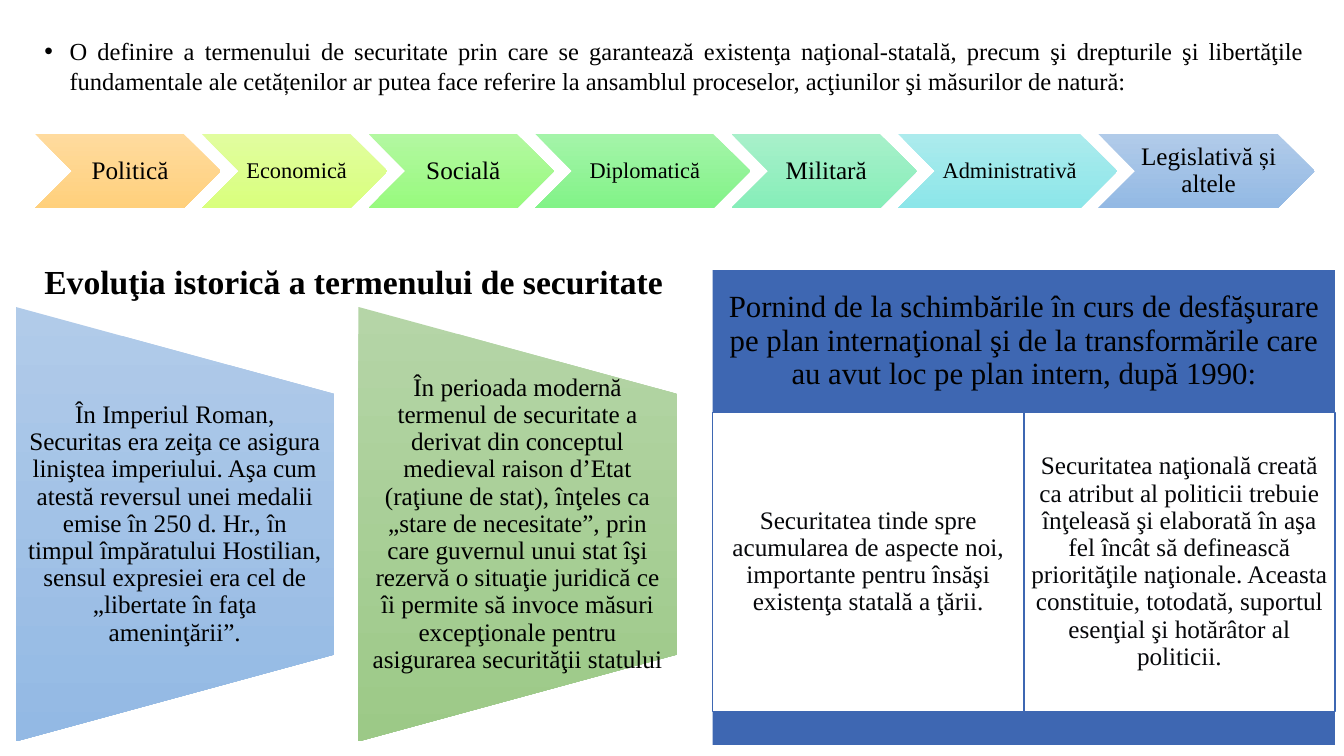
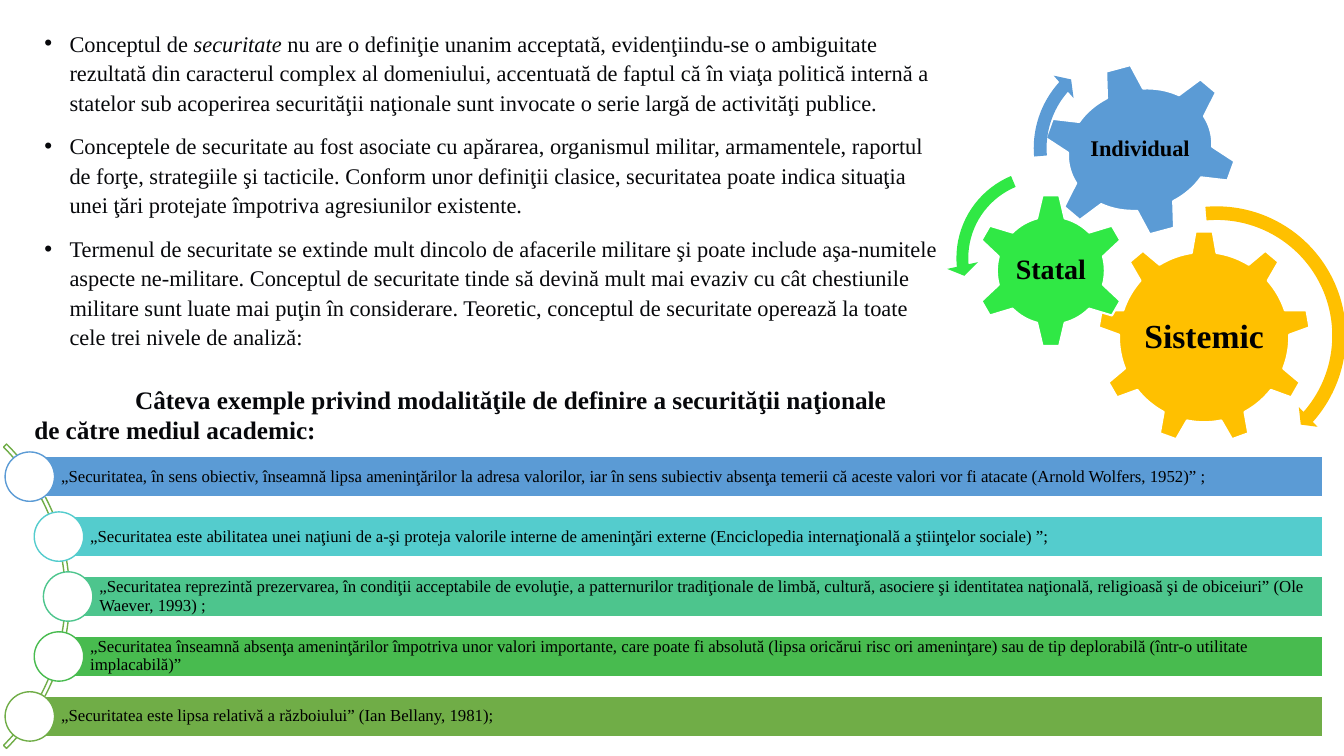
from dataclasses import dataclass

from pptx import Presentation
from pptx.dml.color import RGBColor
from pptx.enum.shapes import MSO_SHAPE
from pptx.enum.text import MSO_ANCHOR, MSO_AUTO_SIZE, PP_ALIGN
from pptx.oxml.ns import qn
from pptx.util import Inches, Pt

SLIDE_WIDTH, SLIDE_HEIGHT = Inches(13.33), Inches(7.5)


@dataclass(frozen=True)
class Theme:
    font: str = "Times New Roman"
    black: str = "000000"
    ink: str = "07080B"
    white: str = "FFFFFF"
    panel: str = "3E67B2"
    blue: str = "5B9BD5"
    gold: str = "FFC000"
    lime: str = "30E845"
    green: str = "70AD47"
    blue_fade: tuple = ("B1CBE9", "93B9E4")
    green_fade: tuple = ("B5D5A7", "9CC987")
    heading: float = 24
    panel_heading: float = 22
    subheading: float = 20
    text: float = 18
    lead: float = 17.5
    small: float = 16
    note: float = 12


THEME = Theme()

# Chevron: label, width in percent of the slide, size, gradient
CHEVRONS = [
    ("Politică", 13.8, THEME.text, ("FFDB9E", "FFD07C")),
    ("Economică", 13.8, THEME.small, ("E1FD9F", "D9FF7D")),
    ("Socială", 13.8, THEME.text, ("B3F8A1", "98FA7E")),
    ("Diplomatică", 16, THEME.small, ("A4F4A9", "82F388")),
    ("Militară", 13.8, THEME.text, ("A8F0CA", "86EEB9")),
    ("Administrativă", 16.3, THEME.small, ("ACEBED", "8CE6E9")),
    ("Legislativă și altele", 16.1, THEME.text, THEME.blue_fade),
]
HISTORY = [
    ("În Imperiul Roman, Securitas era zeiţa ce asigura liniştea imperiului. Aşa cum atestă "
     "reversul unei medalii emise în 250 d. Hr., în timpul împăratului Hostilian, sensul "
     "expresiei era cel de „libertate în faţa ameninţării”.", THEME.blue_fade),
    ("În perioada modernă termenul de securitate a derivat din conceptul medieval raison d’Etat "
     "(raţiune de stat), înţeles ca „stare de necesitate”, prin care guvernul unui stat îşi "
     "rezervă o situaţie juridică ce îi permite să invoce măsuri excepţionale pentru "
     "asigurarea securităţii statului", THEME.green_fade),
]
PANEL_TEXTS = [
    "Securitatea tinde spre acumularea de aspecte noi, importante pentru însăşi existenţa "
    "statală a ţării.",
    "Securitatea naţională creată ca atribut al politicii trebuie înţeleasă şi elaborată în aşa "
    "fel încât să definească priorităţile naţionale. Aceasta constituie, totodată, suportul "
    "esenţial şi hotărâtor al politicii.",
]
# Each paragraph is a list of runs; odd runs are italic
CONCEPTS = [
    ["Conceptul de ", "securitate",
     " nu are o definiţie unanim acceptată, evidenţiindu-se o ambiguitate rezultată din "
     "caracterul complex al domeniului, accentuată de faptul că în viaţa politică internă a "
     "statelor sub acoperirea securităţii naţionale sunt invocate o serie largă de activităţi "
     "publice."],
    ["Conceptele de securitate au fost asociate cu apărarea, organismul militar, armamentele, "
     "raportul de forţe, strategiile şi tacticile. Conform unor definiţii clasice, securitatea "
     "poate indica situaţia unei ţări protejate împotriva agresiunilor existente."],
    ["Termenul de securitate se extinde mult dincolo de afacerile militare şi poate include "
     "aşa-numitele aspecte ne-militare. Conceptul de securitate tinde să devină mult mai evaziv "
     "cu cât chestiunile militare sunt luate mai puţin în considerare. Teoretic, conceptul de "
     "securitate operează la toate cele trei nivele de analiză:"],
]
# Definition: text, left of its circle in percent, colour
DEFINITIONS = [
    ("„Securitatea, în sens obiectiv, înseamnă lipsa ameninţărilor la adresa valorilor, iar în "
     "sens subiectiv absenţa temerii că aceste valori vor fi atacate (Arnold Wolfers, 1952)” ;",
     0.38, THEME.blue),
    ("„Securitatea este abilitatea unei naţiuni de a-şi proteja valorile interne de ameninţări "
     "externe (Enciclopedia internaţională a ştiinţelor sociale) ”;", 2.55, "54CCCD"),
    ("„Securitatea reprezintă prezervarea, în condiţii acceptabile de evoluţie, a patternurilor "
     "tradiţionale de limbă, cultură, asociere şi identitatea naţională, religioasă şi de "
     "obiceiuri” (Ole Waever, 1993) ;", 3.23, "4DC58D"),
    ("„Securitatea înseamnă absenţa ameninţărilor împotriva unor valori importante, care poate "
     "fi absolută (lipsa oricărui risc ori ameninţare) sau de tip deplorabilă (într-o utilitate "
     "implacabilă)”", 2.55, "48BB4F"),
    ("„Securitatea este lipsa relativă a războiului” (Ian Bellany, 1981);", 0.38, THEME.green),
]


def share(left, top, width, height):
    """Turn percentages of the slide into lengths."""
    return (int(SLIDE_WIDTH * left / 100), int(SLIDE_HEIGHT * top / 100),
            int(SLIDE_WIDTH * width / 100), int(SLIDE_HEIGHT * height / 100))


def format_runs(paragraph, size, color, bold=False):
    for run in paragraph.runs:
        run.font.name = THEME.font
        run.font.size = Pt(size)
        run.font.bold = bold
        run.font.color.rgb = RGBColor.from_string(color)


def set_indent(paragraph, margin, first_line):
    properties = paragraph._p.get_or_add_pPr()
    properties.set("marL", str(Inches(margin)))
    properties.set("indent", str(Inches(first_line)))


def write(shape, text, size, color=THEME.black, bold=False, align=PP_ALIGN.CENTER,
          insets=(0.03, 0.03, 0.03, 0.03)):
    frame = shape.text_frame
    frame.word_wrap = True
    frame.vertical_anchor = MSO_ANCHOR.MIDDLE
    (frame.margin_left, frame.margin_top,
     frame.margin_right, frame.margin_bottom) = map(Inches, insets)
    frame.text = text
    paragraph = frame.paragraphs[0]
    paragraph.alignment = align
    paragraph.line_spacing = 0.9
    format_runs(paragraph, size, color, bold)


def add_figure(slide, kind, area, fill=None, line=None, line_width=1, adjustments=()):
    """Add a preset shape; a pair of colours as fill makes a vertical gradient."""
    shape = slide.shapes.add_shape(kind, *area)
    shape.shadow.inherit = False
    for index, value in enumerate(adjustments):
        shape.adjustments[index] = value
    if fill is None:
        shape.fill.background()
    elif isinstance(fill, tuple):
        shape.fill.gradient()
        shape.fill.gradient_angle = 270
        for stop, color in zip(shape.fill.gradient_stops, fill):
            stop.color.rgb = RGBColor.from_string(color)
        shape._element.spPr.find(qn("a:gradFill")).set("rotWithShape", "0")
    else:
        shape.fill.solid()
        shape.fill.fore_color.rgb = RGBColor.from_string(fill)
    if line:
        shape.line.color.rgb = RGBColor.from_string(line)
        shape.line.width = Pt(line_width)
    else:
        shape.line.fill.background()
    return shape


def place(placeholder, area):
    placeholder.left, placeholder.top, placeholder.width, placeholder.height = area
    frame = placeholder.text_frame
    frame.auto_size = MSO_AUTO_SIZE.NONE
    frame.vertical_anchor = MSO_ANCHOR.TOP
    return frame


def set_title(slide, text, area, size, color, first_line=0):
    frame = place(slide.shapes.title, area)
    frame.text = text
    paragraph = frame.paragraphs[0]
    paragraph.alignment = PP_ALIGN.LEFT
    set_indent(paragraph, 0, first_line)
    format_runs(paragraph, size, color, bold=True)


def set_bullets(slide, paragraphs, area, size, color, line_spacing, align):
    frame = place(slide.placeholders[1], area)
    for index, runs in enumerate(paragraphs):
        paragraph = frame.add_paragraph() if index else frame.paragraphs[0]
        for run_index, text in enumerate(runs):
            run = paragraph.add_run()
            run.text = text
            run.font.italic = run_index % 2 == 1
        paragraph.alignment = align
        paragraph.line_spacing = line_spacing
        paragraph.space_before = Pt(10)
        set_indent(paragraph, 0.25, -0.25)
        format_runs(paragraph, size, color)


def add_chevrons(slide):
    left, overlap = 2.63, 1.4
    for label, width, size, fade in CHEVRONS:
        chevron = add_figure(slide, MSO_SHAPE.CHEVRON, share(left, 17.73, width, 9.8), fade)
        # Narrow side insets keep the longest labels on one line
        write(chevron, label, size, insets=(0.04, 0.03, 0, 0.03))
        left += width - overlap


def add_trapezoid(slide, text, fade, area):
    """Draw a trapezoid turned on its side, under upright text."""
    left, top, width, height = area
    shift = (height - width) // 2
    trapezoid = add_figure(slide, MSO_SHAPE.FLOWCHART_MANUAL_OPERATION,
                           (left - shift, top + shift, height, width), fade)
    trapezoid.rotation = 270
    write(slide.shapes.add_textbox(*area), text, THEME.text, insets=(0.12, 0, 0.12, 0))


def add_panel(slide):
    left, column, top, head, body, foot = 53.03, 23.15, 35.73, 18.8, 39.6, 4.4
    header = add_figure(slide, MSO_SHAPE.RECTANGLE, share(left, top, 2 * column, head), THEME.panel)
    write(header, "Pornind de la schimbările în curs de desfăşurare pe plan internaţional şi de la "
          "transformările care au avut loc pe plan intern, după 1990:",
          THEME.panel_heading, insets=(0.09,) * 4)
    for index, text in enumerate(PANEL_TEXTS):
        area = share(left + index * column, top + head, column, body)
        cell = add_figure(slide, MSO_SHAPE.RECTANGLE, area, THEME.white, THEME.panel)
        write(cell, text, THEME.text, THEME.ink, insets=(0.07,) * 4)
    add_figure(slide, MSO_SHAPE.RECTANGLE,
               share(left, top + head + body, 2 * column, foot), THEME.panel)


def add_gear(slide, kind, label, size, color, area, rotation=0):
    """Draw a gear with an upright label over its centre."""
    gear = add_figure(slide, kind, area, color, THEME.white, 1.5)
    gear.rotation = rotation
    left, top, width, height = area
    label_area = (left + width // 5, top + height // 4, width * 3 // 5, height // 2)
    write(slide.shapes.add_textbox(*label_area), label, size, bold=True)


def add_gears(slide):
    add_gear(slide, MSO_SHAPE.GEAR_9, "Sistemic", THEME.heading, THEME.gold,
             share(81.68, 30.53, 15.83, 28.13))
    add_gear(slide, MSO_SHAPE.GEAR_6, "Statal", THEME.subheading, THEME.lime,
             share(72.45, 25.6, 11.48, 20.4))
    add_gear(slide, MSO_SHAPE.GEAR_6, "Individual", THEME.small, THEME.blue,
             share(77.48, 8.4, 14.7, 22.8), rotation=345)
    arrows = [
        (MSO_SHAPE.CIRCULAR_ARROW, (80.4, 26.4, 20.25, 36), THEME.gold,
         (0.05, 2.99, 24.97, 159.02, 0.05)),
        (MSO_SHAPE.LEFT_CIRCULAR_ARROW, (70.43, 21.07, 14.7, 26.13), THEME.lime,
         (0.06, 4.3, 104.89, 148.38, 0.08)),
        (MSO_SHAPE.CIRCULAR_ARROW, (76.28, 5.47, 15.9, 28.27), THEME.blue,
         (0.06, 3.94, 133.14, 105.08, 0.07)),
    ]
    for kind, area, color, adjustments in arrows:
        add_figure(slide, kind, share(*area), color, adjustments=adjustments)


def add_definitions(slide):
    top, pitch, height, right = 60.4, 7.93, 5.3, 98.4
    circle_width, circle_height = 3.68, 6.53
    add_figure(slide, MSO_SHAPE.BLOCK_ARC, share(-26.85, 50.4, 32.03, 56.93),
               line=THEME.green, adjustments=(189, 27, 0.01))
    for index, (text, left, color) in enumerate(DEFINITIONS):
        bar_top, bar_left = top + index * pitch, left + circle_width / 2
        bar = add_figure(slide, MSO_SHAPE.RECTANGLE,
                         share(bar_left, bar_top, right - bar_left, height), color, THEME.white)
        write(bar, text, THEME.note, align=PP_ALIGN.LEFT, insets=(0.31, 0.03, 0.03, 0.03))
        circle_top = bar_top - (circle_height - height) / 2
        add_figure(slide, MSO_SHAPE.OVAL, share(left, circle_top, circle_width, circle_height),
                   THEME.white, color)


def build_evolution(slide):
    definition = ("O definire a termenului de securitate prin care se garantează existenţa "
                  "naţional-statală, precum şi drepturile şi libertăţile fundamentale ale "
                  "cetățenilor ar putea face referire la ansamblul proceselor, acţiunilor şi "
                  "măsurilor de natură:")
    set_bullets(slide, [[definition]], share(2.55, 4.13, 95.33, 10.27),
                THEME.lead, THEME.black, 1.0, PP_ALIGN.JUSTIFY)
    add_chevrons(slide)
    set_title(slide, "Evoluţia istorică a termenului de securitate",
              share(2.55, 33.87, 49.3, 6.67), THEME.heading, THEME.black)
    for index, (text, fade) in enumerate(HISTORY):
        add_trapezoid(slide, text, fade, share(1.16 + index * 25.5, 40.6, 23.7, 57.47))
    add_panel(slide)


def build_concepts(slide):
    set_bullets(slide, CONCEPTS, share(2.55, 2.93, 68.03, 45.47),
                THEME.small, THEME.ink, 1.1, PP_ALIGN.LEFT)
    add_gears(slide)
    set_title(slide, "Câteva exemple privind modalităţile de definire a securităţii naţionale "
              "de către mediul academic:", share(1.8, 50.13, 66.9, 9.47),
              THEME.text, THEME.ink, first_line=1)
    add_definitions(slide)


def main():
    presentation = Presentation()
    presentation.slide_width, presentation.slide_height = SLIDE_WIDTH, SLIDE_HEIGHT
    for build in (build_evolution, build_concepts):
        build(presentation.slides.add_slide(presentation.slide_layouts[1]))
    presentation.save("out.pptx")


if __name__ == "__main__":
    main()
